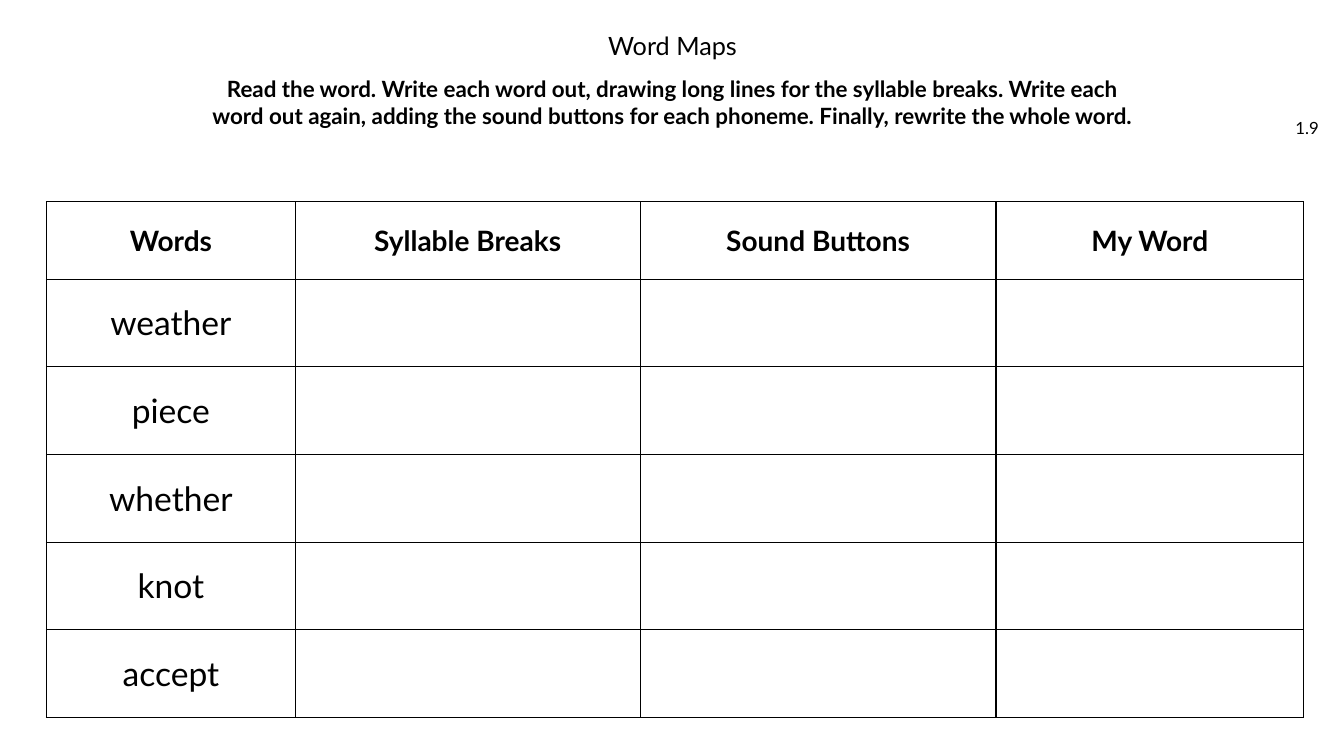
from lxml import etree
from pptx import Presentation
from pptx import util as u
from pptx.dml.color import RGBColor
from pptx.enum import text
from pptx.oxml.ns import qn

BLACK = RGBColor(0, 0, 0)
FONT = "Lato"
SLIDE_W, SLIDE_H = 13.33, 7.5

HEADERS = ["Words", "Syllable Breaks", "Sound Buttons", "My Word"]
WORDS = ["weather", "piece", "whether", "knot", "accept"]
COLUMN_WIDTHS = [2.47, 3.42, 3.53, 3.05]
HEADER_HEIGHT, WORD_HEIGHT = 0.77, 0.87

TITLE = "Word Maps"
INSTRUCTIONS = (
    "Read the word. Write each word out, drawing long lines for the syllable "
    "breaks. Write each word out again, adding the sound buttons for each "
    "phoneme. Finally, rewrite the whole word."
)


def write(tf, words, size, bold=False, align=text.PP_ALIGN.CENTER):
    p = tf.paragraphs[0]
    p.alignment = align
    r = p.add_run()
    r.text = words
    font = {"name": FONT, "size": u.Pt(size), "bold": bold}
    for name, value in font.items():
        setattr(r.font, name, value)
    r.font.color.rgb = BLACK
    return p


def add_label(s, box, words, size, anchor=text.MSO_ANCHOR.MIDDLE, **style):
    tf = s.shapes.add_textbox(*map(u.Inches, box)).text_frame
    tf.word_wrap = True
    tf.vertical_anchor = anchor
    return write(tf, words, size, **style)


def add_border(cell):
    tc_pr = cell._tc.get_or_add_tcPr()
    for position, side in enumerate(("lnL", "lnR", "lnT", "lnB")):
        line = etree.Element(qn(f"a:{side}"), w=str(u.Pt(1)))
        fill = etree.SubElement(line, qn("a:solidFill"))
        etree.SubElement(fill, qn("a:srgbClr"), val=str(BLACK))
        tc_pr.insert(position, line)


# Title, instructions and sheet number
def add_heading(s, left, top, width):
    title = add_label(s, (left, top, width, 0.35), TITLE, 18,
                      anchor=text.MSO_ANCHOR.TOP)
    title.line_spacing = 0.9
    add_label(s, (left, top + 0.31, width, 0.82), INSTRUCTIONS, 16, bold=True)
    add_label(s, (SLIDE_W - 0.78, top + 0.78, 0.63, 0.4), "1.9", 12,
              align=text.PP_ALIGN.RIGHT)


# Worksheet grid: a header row, then one row for each word
def add_word_grid(s, left, top):
    heights = [HEADER_HEIGHT] + [WORD_HEIGHT] * len(WORDS)
    frame = s.shapes.add_table(
        len(heights), len(HEADERS), u.Inches(left), u.Inches(top),
        u.Inches(sum(COLUMN_WIDTHS)), u.Inches(sum(heights)))
    table = frame.table
    table.first_row = table.horz_banding = False
    for column, width in zip(table.columns, COLUMN_WIDTHS):
        column.width = u.Inches(width)
    for row, height in zip(table.rows, heights):
        row.height = u.Inches(height)
    for cell in table.iter_cells():
        cell.fill.background()
        cell.vertical_anchor = text.MSO_ANCHOR.MIDDLE
        add_border(cell)
    for col, header in enumerate(HEADERS):
        write(table.cell(0, col).text_frame, header, 20, bold=True)
    for row, word in enumerate(WORDS, 1):
        write(table.cell(row, 0).text_frame, word, 24)


def main():
    prs = Presentation()
    prs.slide_width, prs.slide_height = u.Inches(SLIDE_W), u.Inches(SLIDE_H)
    s = prs.slides.add_slide(prs.slide_layouts[6])
    add_heading(s, left=1.97, top=0.29, width=9.4)
    add_word_grid(s, left=0.46, top=2)
    prs.save("out.pptx")


if __name__ == "__main__":
    main()
